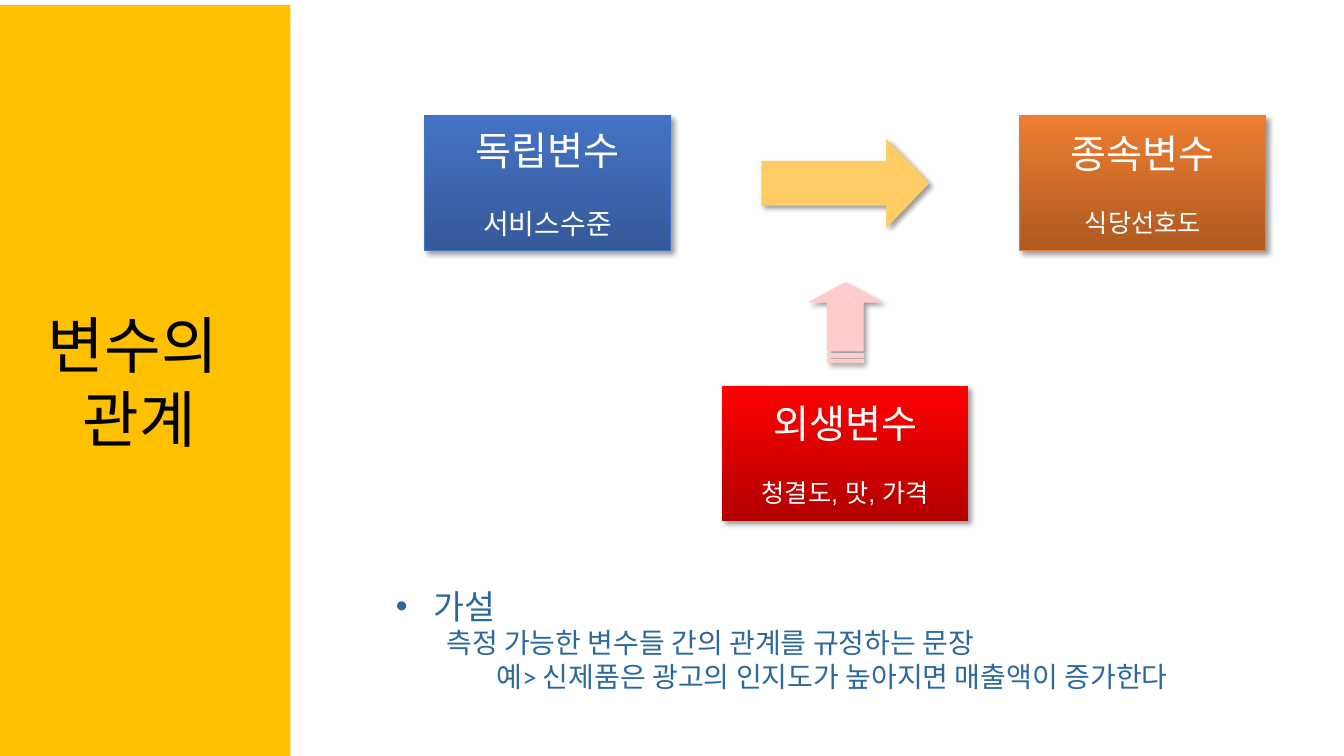
from lxml import etree
from pptx import Presentation
from pptx.dml.color import RGBColor
from pptx.enum.shapes import MSO_SHAPE
from pptx.enum.text import MSO_ANCHOR, MSO_AUTO_SIZE, PP_ALIGN
from pptx.oxml.ns import qn
from pptx.util import Cm, Pt

RECTANGLE = MSO_SHAPE.RECTANGLE
RIGHT_ARROW = MSO_SHAPE.RIGHT_ARROW
STRIPED_ARROW = MSO_SHAPE.STRIPED_RIGHT_ARROW
MIDDLE = MSO_ANCHOR.MIDDLE
NO_FIT = MSO_AUTO_SIZE.NONE
GROW = MSO_AUTO_SIZE.SHAPE_TO_FIT_TEXT
CENTER = PP_ALIGN.CENTER
LEFT = PP_ALIGN.LEFT

BLACK = RGBColor(0x00, 0x00, 0x00)
WHITE = RGBColor(0xFF, 0xFF, 0xFF)
AMBER = RGBColor(0xFF, 0xC0, 0x00)
BLUE = RGBColor(0x44, 0x72, 0xC4)
DARK_BLUE = RGBColor(0x35, 0x59, 0x9A)
ORANGE = RGBColor(0xED, 0x7D, 0x31)
DARK_ORANGE = RGBColor(0xAE, 0x5A, 0x21)
RED = RGBColor(0xFF, 0x00, 0x00)
DARK_RED = RGBColor(0xB2, 0x00, 0x00)
SAND = RGBColor(0xFF, 0xCC, 0x66)
PINK = RGBColor(0xFF, 0xCC, 0xCC)
STEEL = RGBColor(0x2B, 0x68, 0x9F)

CARD_WIDTH, CARD_HEIGHT = Cm(6.2), Cm(3.4)


def add_soft_shadow(shape):
    """Give the shape a short diagonal shadow."""
    shape.shadow.inherit = False
    effects = shape._element.spPr.find(qn("a:effectLst"))
    shadow = etree.SubElement(effects, qn("a:outerShdw"), blurRad=str(Pt(4)),
                              dist=str(Pt(3)), dir="2700000", rotWithShape="0")
    color = etree.SubElement(shadow, qn("a:srgbClr"), val=str(BLACK))
    etree.SubElement(color, qn("a:alpha"), val="40000")


def add_title_panel(slide, left, top, width, height):
    """Turn the title placeholder into the side panel."""
    title = slide.shapes.title
    title.left, title.top, title.width, title.height = left, top, width, height
    title.fill.solid()
    title.fill.fore_color.rgb = AMBER
    frame = title.text_frame
    frame.text = "변수의 \v관계"
    frame.auto_size = NO_FIT
    frame.vertical_anchor = MIDDLE
    heading = frame.paragraphs[0]
    heading.alignment = CENTER
    heading.font.size = Pt(44)
    heading.font.name = "Calibri"
    heading.font.color.rgb = BLACK


def add_variable_card(slide, left, top, name, example, size, colors, border):
    """Draw a gradient card with a variable's name and its example."""
    card = slide.shapes.add_shape(RECTANGLE, left, top, CARD_WIDTH, CARD_HEIGHT)
    card.fill.gradient()
    card.fill.gradient_angle = 270
    for stop, color in zip(card.fill.gradient_stops, colors):
        stop.color.rgb = color
    if border:
        card.line.color.rgb = border
        card.line.width = Pt(0.75)
    else:
        card.line.fill.background()
    add_soft_shadow(card)
    frame = card.text_frame
    frame.word_wrap = False
    frame.vertical_anchor = MIDDLE
    frame.text = f"{name}\n{example}"
    for paragraph, points in zip(frame.paragraphs, (28, size)):
        paragraph.alignment = CENTER
        paragraph.font.size = Pt(points)
        paragraph.font.name = "Arial"
        paragraph.font.color.rgb = WHITE
    frame.paragraphs[1].space_before = Pt(1.2 * size)


def add_block_arrow(slide, kind, center_x, center_y, width, height, head, color,
                    rotation=0):
    """Draw a block arrow around a centre point."""
    arrow = slide.shapes.add_shape(kind, center_x - width // 2,
                                   center_y - height // 2, width, height)
    arrow.adjustments[0] = 0.5
    arrow.adjustments[1] = head
    arrow.rotation = rotation
    arrow.fill.solid()
    arrow.fill.fore_color.rgb = color
    arrow.line.color.rgb = color
    arrow.line.width = Pt(0.75)
    add_soft_shadow(arrow)


def add_variable_diagram(slide, left, top, width, height):
    """Place three variable cards and the arrows between them."""
    center_x = left + width // 2
    row_y = top + CARD_HEIGHT // 2
    bottom_top = top + height - CARD_HEIGHT
    cards = (
        (left, top, "독립변수", "서비스수준", 20, (BLUE, DARK_BLUE), BLUE),
        (left + width - CARD_WIDTH, top, "종속변수", "식당선호도", 18,
         (ORANGE, DARK_ORANGE), ORANGE),
        (center_x - CARD_WIDTH // 2, bottom_top, "외생변수", "청결도, 맛, 가격", 18,
         (RED, DARK_RED), None),
    )
    for card in cards:
        add_variable_card(slide, *card)
    add_block_arrow(slide, RIGHT_ARROW, center_x, row_y, Cm(4.2), Cm(2.2),
                    0.48, SAND)
    gap_y = (top + CARD_HEIGHT + bottom_top) // 2
    add_block_arrow(slide, STRIPED_ARROW, center_x, gap_y + Cm(0.1), Cm(2),
                    Cm(1.8), 0.27, PINK, 270)


def add_hypothesis(slide, left, top, width, height):
    """Write the hypothesis, its definition and an example."""
    box = slide.shapes.add_textbox(left, top, width, height)
    frame = box.text_frame
    frame.word_wrap = True
    frame.auto_size = GROW
    lines = (
        ("가설", 24, 0.95),
        ("측정 가능한 변수들 간의 관계를 규정하는 문장", 20, 1.27),
        ("예> 신제품은 광고의 인지도가 높아지면 매출액이 증가한다", 20, 2.54),
    )
    frame.text = "\n".join(text for text, _, _ in lines)
    for level, (paragraph, (_, size, margin)) in enumerate(zip(frame.paragraphs, lines)):
        paragraph.level = level
        paragraph.alignment = LEFT
        paragraph.font.size = Pt(size)
        paragraph.font.name = "Calibri"
        paragraph.font.color.rgb = STEEL
        properties = paragraph._p.get_or_add_pPr()
        properties.set("marL", str(Cm(margin)))
        properties.set("indent", "0")
    bulleted = frame.paragraphs[0]._p.get_or_add_pPr()
    bulleted.set("indent", str(-Cm(0.95)))
    bullet_font = etree.Element(qn("a:buFont"), typeface="Arial")
    bullet = etree.Element(qn("a:buChar"), char="•")
    bulleted[:0] = [bullet_font, bullet]


def main():
    """Build and save the slide."""
    deck = Presentation()
    deck.slide_width, deck.slide_height = Cm(33.87), Cm(19.05)
    slide = deck.slides.add_slide(deck.slide_layouts[5])
    add_title_panel(slide, Cm(-0.28), Cm(0.13), Cm(7.6), Cm(18.92))
    add_variable_diagram(slide, Cm(10.7), Cm(2.92), Cm(21.2), Cm(10.21))
    add_hypothesis(slide, Cm(9.73), Cm(14.63), Cm(21.8), Cm(3))
    deck.save("out.pptx")


if __name__ == "__main__":
    main()
